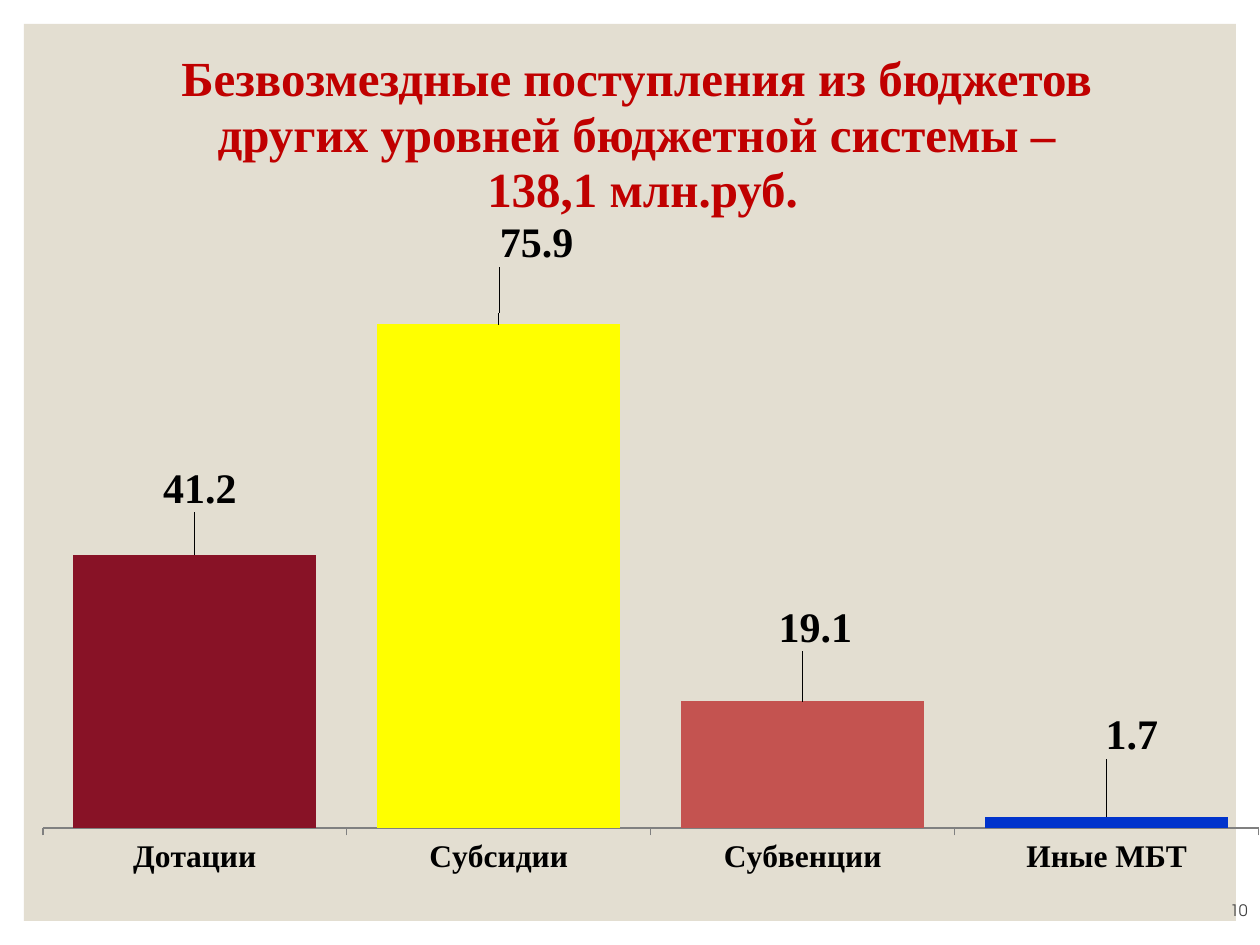
import pptx
import pptx.util
import pptx.chart.data
import pptx.dml.color
import pptx.enum.chart
import pptx.enum.shapes
import pptx.enum.text
import pptx.oxml
import pptx.oxml.ns
from lxml import etree

Pt = pptx.util.Pt
qn = pptx.oxml.ns.qn
ALIGN = pptx.enum.text.PP_ALIGN
ANCHOR = pptx.enum.text.MSO_ANCHOR

COLORS = {
    "panel": "E3DED1",
    "title": "C00000",
    "text": "000000",
    "number": "404040",
    "axis": "808080",
}
SERIF = "Times New Roman"
SANS = "TeX Gyre Adventor"
TITLE = [
    "Безвозмездные поступления из бюджетов ",
    "других уровней бюджетной системы – ",
    "138,1 млн.руб.",
]
BARS = [
    ("Дотации", 41.2, "881226", (0.004, -0.05)),
    ("Субсидии", 75.9, "FFFF00", (0.03, -0.07)),
    ("Субвенции", 19.1, "C45350", (0.01, -0.06)),
    ("Иные МБТ", 1.7, "0033CC", (0.02, -0.07)),
]


def rgb(value):
    return pptx.dml.color.RGBColor.from_string(value)


def apply(obj, formats):
    for name, value in formats.items():
        setattr(obj, name, value)


def style_font(font, size, name, color, bold=False):
    apply(font, {"size": Pt(size), "name": name, "bold": bold})
    font.color.rgb = rgb(color)


def place(sp, left, top, width, height):
    apply(sp, {"left": Pt(left), "top": Pt(top),
               "width": Pt(width), "height": Pt(height)})


def add_panel(s):
    sp = s.shapes.add_shape(pptx.enum.shapes.MSO_SHAPE.RECTANGLE,
                            Pt(13.7), Pt(13.7), Pt(692.6), Pt(512.6))
    sp.shadow.inherit = False
    sp.fill.solid()
    sp.fill.fore_color.rgb = rgb(COLORS["panel"])
    sp.line.fill.background()
    s.shapes._spTree.insert(2, sp._element)


def add_title(s):
    sp = s.shapes.title
    place(sp, 14.4, 0, 705.6, 82.8)
    tf = sp.text_frame
    apply(tf, {"vertical_anchor": ANCHOR.TOP, "margin_top": Pt(30),
               "word_wrap": True, "auto_size": pptx.enum.text.MSO_AUTO_SIZE.NONE})
    p = tf.paragraphs[0]
    apply(p, {"alignment": ALIGN.CENTER, "line_spacing": 0.94})
    for i, line in enumerate(TITLE):
        if i:
            p.add_line_break()
        r = p.add_run()
        r.text = line
        style_font(r.font, 28, SERIF, COLORS["title"], True)
    for br in p._p.iter(qn("a:br")):
        etree.SubElement(br, qn("a:rPr")).set("sz", "2800")


def set_layout(parent, index, values):
    for old in parent.findall(qn("c:layout")):
        parent.remove(old)
    layout = etree.Element(qn("c:layout"))
    manual = etree.SubElement(layout, qn("c:manualLayout"))
    for tag, value in values.items():
        etree.SubElement(manual, qn("c:" + tag)).set("val", str(value))
    parent.insert(index, layout)


def add_chart(s):
    data = pptx.chart.data.CategoryChartData()
    data.categories = [bar[0] for bar in BARS]
    data.add_series("Series 1", [bar[1] for bar in BARS])
    chart = s.shapes.add_chart(pptx.enum.chart.XL_CHART_TYPE.COLUMN_CLUSTERED,
                               Pt(0), Pt(111.6), Pt(720), Pt(428.4), data).chart
    apply(chart, {"has_legend": False, "has_title": False})
    style_font(chart.font, 18, SANS, COLORS["text"])
    apply(chart.value_axis, {"visible": False, "has_major_gridlines": False,
                             "minimum_scale": 0, "maximum_scale": 80})
    axis = chart.category_axis
    axis.major_tick_mark = pptx.enum.chart.XL_TICK_MARK.OUTSIDE
    style_font(axis.tick_labels.font, 18, SERIF, COLORS["text"], True)
    axis.format.line.color.rgb = rgb(COLORS["axis"])
    axis.format.line.width = Pt(0.75)
    plot = chart.plots[0]
    apply(plot, {"gap_width": 25, "vary_by_categories": False})
    for i, (_, _, color, _) in enumerate(BARS):
        point = plot.series[0].points[i]
        point.format.fill.solid()
        point.format.fill.fore_color.rgb = rgb(color)
        label = point.data_label
        style_font(label.font, 24, SERIF, COLORS["text"], True)
        label.position = pptx.enum.chart.XL_LABEL_POSITION.OUTSIDE_END
    root = chart._chartSpace
    for dlbl, (_, _, _, (x, y)) in zip(root.iter(qn("c:dLbl")), BARS):
        set_layout(dlbl, 1, {"x": x, "y": y})
    set_layout(next(root.iter(qn("c:plotArea"))), 0, {
        "layoutTarget": "inner", "xMode": "edge", "yMode": "edge",
        "x": 0.034, "y": 0.136, "w": 0.965, "h": 0.708})


def add_number(s):
    tf = s.shapes.add_textbox(Pt(552.2), Pt(500.4), Pt(167.8), Pt(28.8)).text_frame
    apply(tf, {"word_wrap": True, "vertical_anchor": ANCHOR.BOTTOM})
    p = tf.paragraphs[0]
    p.alignment = ALIGN.RIGHT
    r = p.add_run()
    r.text = "10"
    style_font(r.font, 9, SANS, COLORS["number"])


def main():
    prs = pptx.Presentation()
    apply(prs, {"slide_width": Pt(720), "slide_height": Pt(540)})
    s = prs.slides.add_slide(prs.slide_layouts[5])
    add_panel(s)
    add_title(s)
    add_chart(s)
    add_number(s)
    prs.save("out.pptx")


if __name__ == "__main__":
    main()
